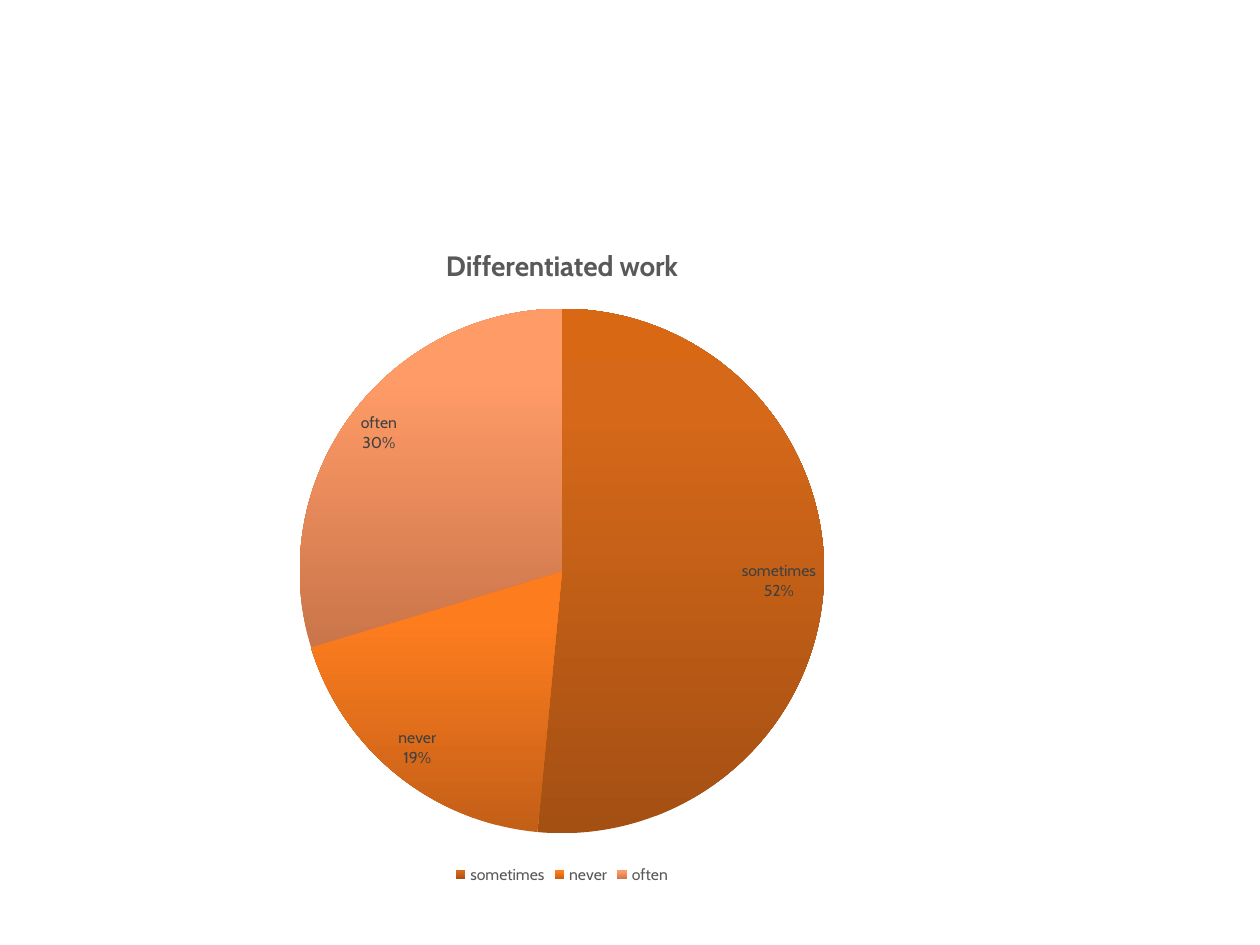
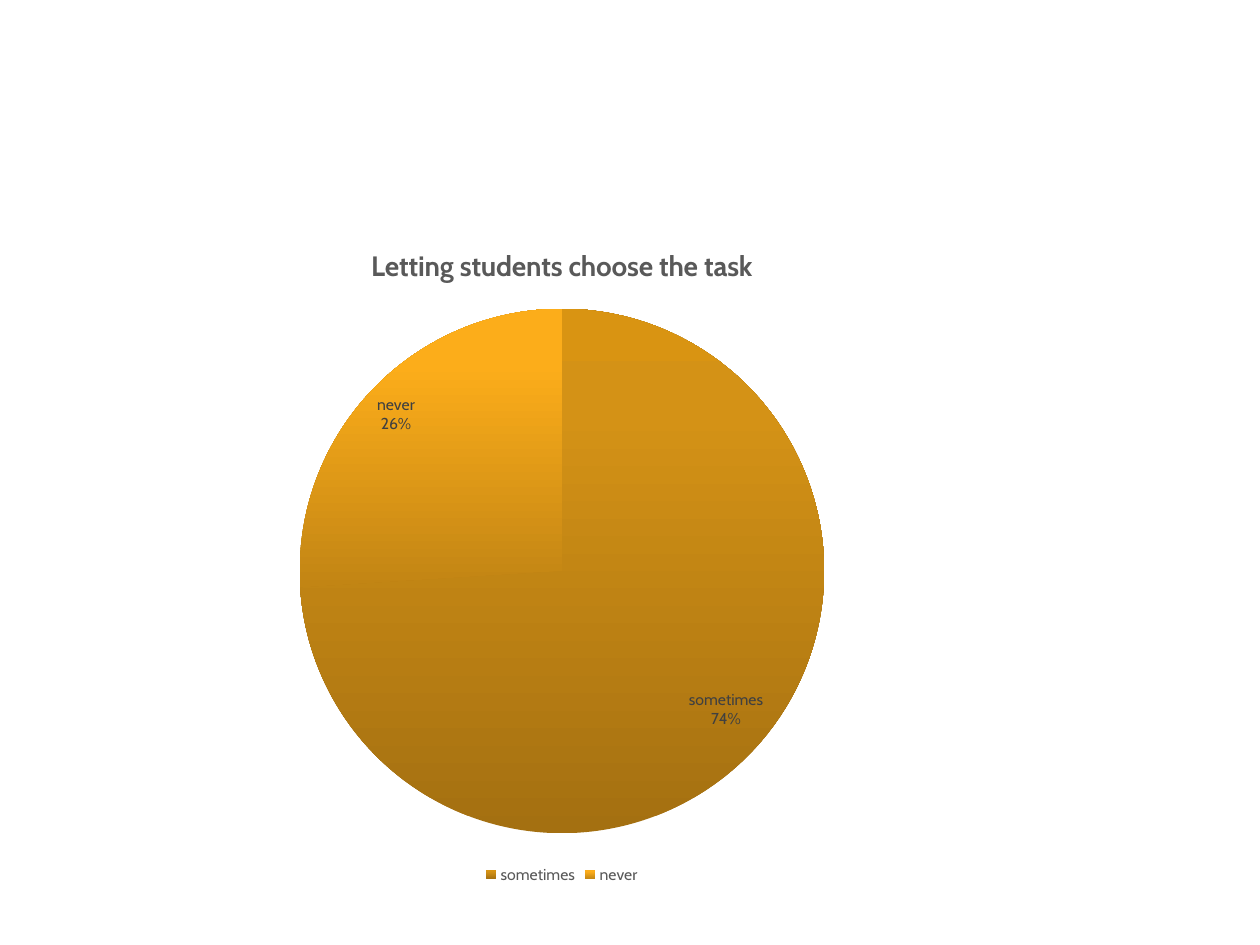
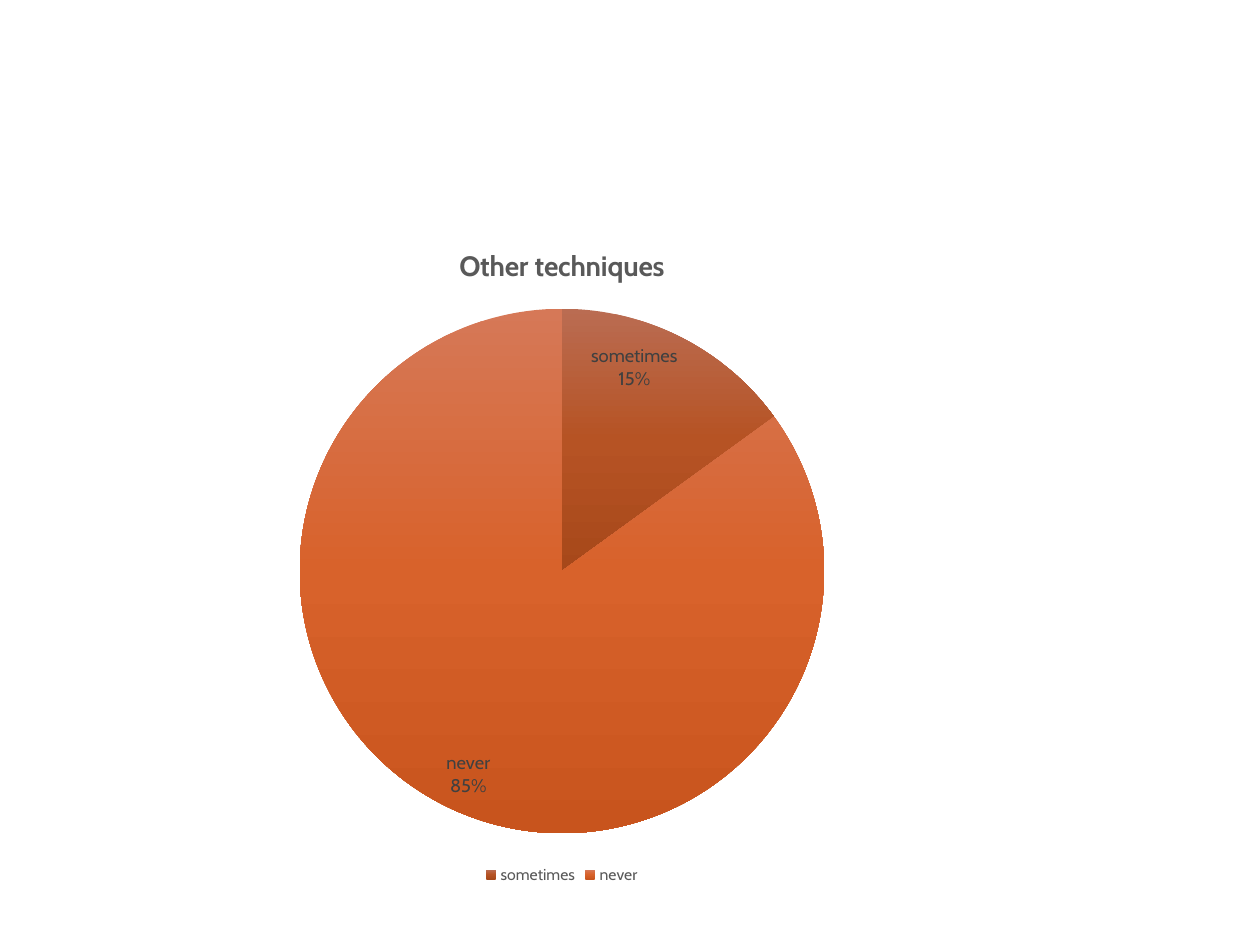
from copy import deepcopy
from dataclasses import dataclass

from lxml import etree
from pptx import Presentation
from pptx.chart.data import CategoryChartData
from pptx.dml.color import RGBColor
from pptx.enum.chart import XL_CHART_TYPE, XL_LABEL_POSITION, XL_LEGEND_POSITION
from pptx.oxml.ns import qn
from pptx.util import Inches, Pt


@dataclass(frozen=True)
class Theme:
    font: str = "Cabin"
    background: str = "FFFFFF"
    base_text: str = "000000"
    heading_text: str = "595959"
    label_text: str = "404040"
    base_size: float = 10
    title_size: float = 16
    legend_size: float = 9
    label_size: float = 9
    large_label_size: float = 10.5


THEME = Theme()
BLANK_LAYOUT = 6

# Gradient stop positions and angles (counter-clockwise degrees)
RISING = {"positions": (0, 0.8, 1), "angle": 90}
FALLING = {"positions": (0, 0.5, 1), "angle": 270}

# Label size and position; None lets the chart find the best fit
BEST_FIT_LABELS = {"size": THEME.label_size, "position": None}
INSIDE_LABELS = {"size": THEME.large_label_size,
                 "position": XL_LABEL_POSITION.INSIDE_END}

# Each slice: category, share in percent, gradient colours
SURVEY_CHARTS = [
    {
        "title": "Differentiated work",
        "gradient": RISING,
        "label_style": BEST_FIT_LABELS,
        "slices": [
            ("sometimes", 52, ("A45013", "D56819", "D96815")),
            ("never", 19, ("C35F17", "FD7C1E", "FF7C1D")),
            ("often", 30, ("CA754A", "FF9B67", "FF9C69")),
        ],
    },
    {
        "title": "Letting students choose the task",
        "gradient": RISING,
        "label_style": BEST_FIT_LABELS,
        "slices": [
            ("sometimes", 74, ("A47011", "D49216", "D99412")),
            ("never", 26, ("C28514", "FCAD1A", "FFAE18")),
        ],
    },
    {
        "title": "Other techniques",
        "gradient": FALLING,
        "label_style": INSIDE_LABELS,
        "slices": [
            ("sometimes", 15, ("BA6C52", "B65324", "A7481A")),
            ("never", 85, ("D67857", "D8622B", "C8541D")),
        ],
    },
]


def style_font(font, size, color, bold=False):
    font.name = THEME.font
    font.size = Pt(size)
    font.bold = bold
    font.color.rgb = RGBColor.from_string(color)


def fill_gradient(fill, colors, positions, angle):
    fill.gradient()
    fill.gradient_angle = angle
    # A new gradient has two stops; add the missing ones
    stop_list = fill.gradient_stops._gsLst
    while len(stop_list) < len(colors):
        stop_list.append(deepcopy(stop_list[0]))
    for stop, color, position in zip(fill.gradient_stops, colors, positions):
        stop.color.rgb = RGBColor.from_string(color)
        stop.position = position


def set_title(chart, title):
    chart.has_title = True
    text_frame = chart.chart_title.text_frame
    text_frame.text = title
    style_font(text_frame.paragraphs[0].runs[0].font,
               THEME.title_size, THEME.heading_text, bold=True)


def set_legend(chart):
    chart.has_legend = True
    chart.legend.position = XL_LEGEND_POSITION.BOTTOM
    chart.legend.include_in_layout = False
    style_font(chart.legend.font, THEME.legend_size, THEME.heading_text)


def set_labels(plot, size, position):
    plot.has_data_labels = True
    labels = plot.data_labels
    style_font(labels.font, size, THEME.label_text)
    # The values are rounded percentages, so they are shown as they are
    labels.show_category_name = True
    labels.show_value = True
    labels.show_percentage = False
    labels.number_format = '0"%"'
    labels.number_format_is_linked = False
    labels.position = position
    # Put the percentage on its own line
    separator = etree.Element(qn("c:separator"))
    separator.text = "\n"
    labels._element.find(qn("c:showBubbleSize")).addnext(separator)


def add_pie_chart(slide, title, gradient, label_style, slices):
    categories, shares, slice_colors = zip(*slices)
    chart_data = CategoryChartData()
    chart_data.categories = categories
    chart_data.add_series(title, shares)
    chart = slide.shapes.add_chart(
        XL_CHART_TYPE.PIE, Inches(0.5), Inches(1.76), Inches(7.92), Inches(5.3),
        chart_data).chart
    style_font(chart.font, THEME.base_size, THEME.base_text)
    set_title(chart, title)
    set_legend(chart)

    plot = chart.plots[0]
    plot.vary_by_categories = True
    set_labels(plot, **label_style)
    for index, colors in enumerate(slice_colors):
        point_format = plot.series[0].points[index].format
        fill_gradient(point_format.fill, colors, **gradient)
        point_format.line.fill.background()


def add_survey_slide(presentation, survey_chart):
    slide = presentation.slides.add_slide(presentation.slide_layouts[BLANK_LAYOUT])
    background = slide.background.fill
    background.solid()
    background.fore_color.rgb = RGBColor.from_string(THEME.background)
    add_pie_chart(slide, **survey_chart)


def main():
    presentation = Presentation()
    presentation.slide_width = Inches(10)
    presentation.slide_height = Inches(7.5)
    for survey_chart in SURVEY_CHARTS:
        add_survey_slide(presentation, survey_chart)
    presentation.save("out.pptx")


if __name__ == "__main__":
    main()
